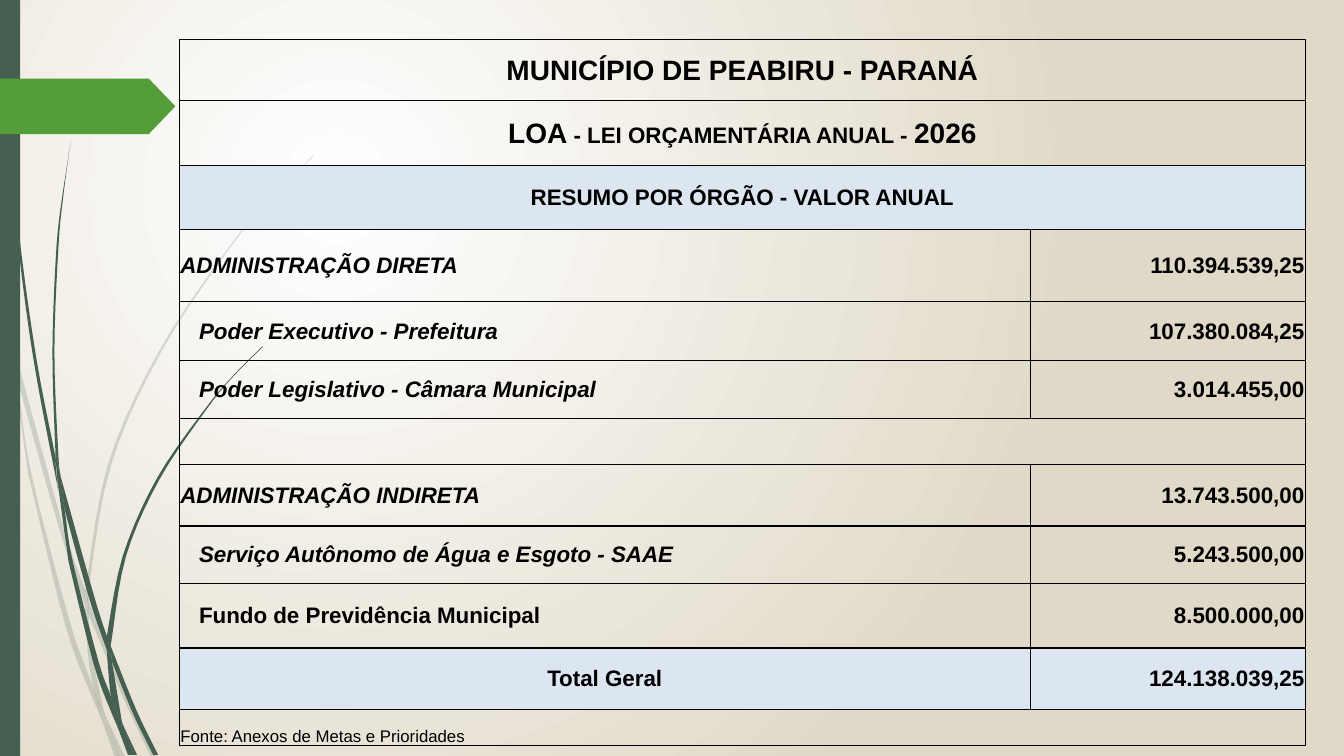
from dataclasses import dataclass
from typing import Optional

from lxml.etree import SubElement
from pptx import Presentation
from pptx.dml.color import RGBColor
from pptx.enum.shapes import MSO_SHAPE as Preset
from pptx.enum.text import MSO_ANCHOR as Anchor, PP_ALIGN as Align
from pptx.oxml.ns import qn
from pptx.util import Inches, Pt

GRID = Inches(0.01)  # side of one grid square
SLIDE_COLUMNS, SLIDE_ROWS = 1333.33, 750
DARK, GREEN, PALE, BLACK = "455F51", "549E39", "DCE6F1", "000000"
FONT = "Arial"
INDENT = 18.5
TABLE_LEFT, TABLE_TOP = 178, 39
TABLE_COLUMNS = (844, 273)

Point = tuple[float, float]


@dataclass
class Blade:
    """A piece of grass: one edge out, the other edge back, in grid squares."""
    out: list[Point]
    back: list[Point]


@dataclass
class Line:
    """A table line; without an amount it spans both columns."""
    height: float
    pieces: list[tuple[str, float]]
    amount: Optional[str] = None
    italic: bool = False
    bold: bool = True
    indent: float = 0
    align: Align = Align.LEFT
    anchor: Anchor = Anchor.MIDDLE
    fill: Optional[str] = None
    rule_below: float = 1


PALE_GRASS = [
    Blade([(11, 350), (9, 322), (0, 282)], [(0, 299), (10, 344)]),
    Blade([(14, 345), (62, 520), (85, 586)], [(84, 599), (58, 522), (17, 376)]),
    Blade([(88, 596), (92, 607), (127, 692), (155, 751)],
          [(150, 751), (123, 694), (88, 610)]),
    Blade([(105, 711), (124, 751)], [(119, 751)]),
    Blade([(11, 350), (17, 376), (31, 469), (70, 619), (93, 683), (101, 714)],
          [(92, 693), (65, 621), (28, 470)]),
    Blade([(84, 599), (87, 646), (93, 683), (105, 711)],
          [(103, 706), (91, 646), (88, 608)]),
    Blade([(88, 596), (88, 584), (110, 462), (160, 349), (229, 245), (268, 198), (312, 154)],
          [(312, 153), (268, 197), (228, 244), (158, 348), (107, 461), (85, 584), (85, 586)]),
    Blade([(101, 714), (114, 751)], [(119, 751)]),
    Blade([(85, 586), (88, 596), (88, 610)], [(88, 608), (84, 599)]),
    Blade([(93, 683), (96, 692), (105, 711), (119, 751)], [(101, 714), (99, 707)]),
]
DARK_GRASS = [
    Blade([(3, 0), (4, 48), (7, 110), (17, 233), (33, 355), (56, 477), (57, 481)],
          [(55, 457), (55, 453), (36, 355), (19, 232), (8, 109), (5, 48), (4, 0)]),
    Blade([(60, 472), (93, 590), (106, 631)], [(106, 645), (88, 592), (64, 505)]),
    Blade([(110, 641), (113, 649), (136, 706), (157, 749)],
          [(152, 749), (132, 708), (111, 656)]),
    Blade([(57, 477), (64, 505), (72, 556), (98, 657), (110, 691), (117, 722)],
          [(111, 708), (93, 659), (68, 557)]),
    Blade([(60, 472), (58, 453), (54, 349), (58, 245), (63, 193), (70, 141)],
          [(62, 193), (56, 245), (52, 349), (55, 449)]),
    Blade([(122, 719), (136, 749)], [(133, 749)]),
    Blade([(55, 449), (60, 472), (64, 505)], [(57, 477), (55, 453)]),
    Blade([(110, 641), (111, 633), (125, 552), (158, 476), (205, 406), (231, 374), (261, 344)],
          [(260, 344), (231, 373), (204, 405), (156, 474), (122, 551), (106, 631)]),
    Blade([(117, 722), (131, 749)], [(127, 749)]),
    Blade([(106, 645), (110, 691), (116, 706), (122, 719)],
          [(121, 716), (111, 656), (109, 651)]),
    Blade([(106, 631), (110, 641), (111, 656)], [(109, 651), (106, 645)]),
    Blade([(110, 691), (116, 706), (122, 719), (133, 749)], [(130, 749), (117, 722)]),
]
LINES = [
    Line(61, [("MUNICÍPIO DE PEABIRU - PARANÁ", 20)], align=Align.CENTER, rule_below=0.5),
    Line(64, [("LOA", 20), (" - LEI ORÇAMENTÁRIA ANUAL - ", 16), ("2026", 20)],
         align=Align.CENTER),
    Line(64, [("RESUMO POR ÓRGÃO - VALOR ANUAL", 16)], align=Align.CENTER, fill=PALE),
    Line(71, [("ADMINISTRAÇÃO DIRETA", 16)], "110.394.539,25", italic=True),
    Line(59, [("Poder Executivo - Prefeitura", 16)], "107.380.084,25", italic=True,
         indent=INDENT, rule_below=0.5),
    Line(57, [("Poder Legislativo - Câmara Municipal", 16)], "3.014.455,00", italic=True,
         indent=INDENT),
    Line(46, []),
    Line(61, [("ADMINISTRAÇÃO INDIRETA", 16)], "13.743.500,00", italic=True),
    Line(57, [("Serviço Autônomo de Água e Esgoto - SAAE", 16)], "5.243.500,00", italic=True,
         indent=INDENT, rule_below=0.5),
    Line(64, [("Fundo de Previdência Municipal", 16)], "8.500.000,00", indent=INDENT),
    Line(61, [("Total Geral", 16)], "124.138.039,25", align=Align.CENTER, fill=PALE),
    Line(36, [("Fonte: Anexos de Metas e Prioridades", 12)], bold=False, anchor=Anchor.BOTTOM),
]


def squares(count: float) -> int:
    return round(count * GRID)


def color(code: str) -> RGBColor:
    return RGBColor.from_string(code)


def smooth(anchors: list[Point], steps: int = 5) -> list[Point]:
    """Points of a Catmull-Rom curve through the anchors."""
    padded = [anchors[0], *anchors, anchors[-1]]
    points = [anchors[0]]
    for a, b, c, d in zip(padded, padded[1:], padded[2:], padded[3:]):
        for step in range(1, steps + 1):
            t = step / steps
            points.append(tuple(
                q + t * (r - p) / 2 + t**2 * (2 * p - 5 * q + 4 * r - s) / 2
                + t**3 * (3 * q - p - 3 * r + s) / 2
                for p, q, r, s in zip(a, b, c, d)))
    return points


def paint(shape, code: str, opacity: float = 1) -> None:
    shape.shadow.inherit = False
    shape.line.fill.background()
    shape.fill.solid()
    shape.fill.fore_color.rgb = color(code)
    if opacity < 1:
        tint = shape.element.spPr.find(qn("a:solidFill")).find(qn("a:srgbClr"))
        SubElement(tint, qn("a:alpha"), val=str(round(opacity * 100000)))


def draw_grass(slide, blades: list[Blade], opacity: float) -> None:
    tuft = slide.shapes.add_group_shape()
    for blade in blades:
        start, *rest = [(squares(x), squares(y))
                        for x, y in smooth(blade.out) + smooth(blade.back)]
        builder = tuft.shapes.build_freeform(*start, scale=1.0)
        builder.add_line_segments(rest, close=True)
        paint(builder.convert_to_shape(), DARK, opacity)


def draw_preset(slide, kind: Preset, area: tuple[float, ...], code: str):
    shape = slide.shapes.add_shape(kind, *map(squares, area))
    paint(shape, code)
    return shape


def draw_background(slide) -> None:
    """Radial gradient centred a quarter of the way across and down."""
    fill = slide.background.fill
    fill.gradient()
    for stop, code in zip(fill.gradient_stops, ("FFFFFF", "E0D9C8")):
        stop.color.rgb = color(code)
    gradient = slide.element.find(".//" + qn("a:gradFill"))
    gradient.remove(gradient.find(qn("a:lin")))
    circle = SubElement(gradient, qn("a:path"), {"path": "circle"})
    SubElement(circle, qn("a:fillToRect"), l="50000", t="50000", r="100000", b="100000")


def format_cell(cell, line: Line, rule_above: float) -> None:
    properties = cell._tc.get_or_add_tcPr()
    for side, width in (("L", 1), ("R", 1), ("T", rule_above), ("B", line.rule_below)):
        border = SubElement(properties, qn("a:ln" + side), w=str(Pt(width)))
        SubElement(SubElement(border, qn("a:solidFill")), qn("a:srgbClr"), val=BLACK)
    if line.fill:
        cell.fill.solid()
        cell.fill.fore_color.rgb = color(line.fill)
    else:
        cell.fill.background()
    cell.margin_left = cell.margin_right = cell.margin_top = squares(1)
    cell.margin_bottom = 0
    cell.vertical_anchor = line.anchor


def write(cell, pieces: list[tuple[str, float]], align: Align, bold: bool, italic: bool) -> None:
    para = cell.text_frame.paragraphs[0]
    para.alignment = align
    for text, size in pieces:
        span = para.add_run()
        span.text = text
        font = span.font
        font.name, font.size, font.bold, font.italic = FONT, Pt(size), bold, italic
        font.color.rgb = color(BLACK)


def draw_budget(slide) -> None:
    area = (TABLE_LEFT, TABLE_TOP, sum(TABLE_COLUMNS), sum(line.height for line in LINES))
    table = slide.shapes.add_table(len(LINES), len(TABLE_COLUMNS), *map(squares, area)).table
    table.first_row = table.horz_banding = False
    for column, width in zip(table.columns, TABLE_COLUMNS):
        column.width = squares(width)
    rule_above = 1
    for index, line in enumerate(LINES):
        table.rows[index].height = squares(line.height)
        label, amount = table.cell(index, 0), table.cell(index, 1)
        for cell in (label, amount):
            format_cell(cell, line, rule_above)
        label.margin_left = squares(1 + line.indent)
        write(label, line.pieces, line.align, line.bold, line.italic)
        if line.amount:
            write(amount, [(line.amount, 16)], Align.RIGHT, True, False)
        else:
            label.merge(amount)
        rule_above = line.rule_below


def main() -> None:
    deck = Presentation()
    deck.slide_width, deck.slide_height = squares(SLIDE_COLUMNS), squares(SLIDE_ROWS)
    page = deck.slides.add_slide(deck.slide_layouts[6])
    draw_background(page)
    draw_grass(page, PALE_GRASS, 0.2)
    draw_grass(page, DARK_GRASS, 1)
    draw_preset(page, Preset.RECTANGLE, (0, 0, 20, SLIDE_ROWS), DARK)
    arrow = draw_preset(page, Preset.PENTAGON, (0, 78, 174, 55), GREEN)
    arrow.adjustments[0] = 0.48
    draw_budget(page)
    deck.save("out.pptx")


if __name__ == "__main__":
    main()
